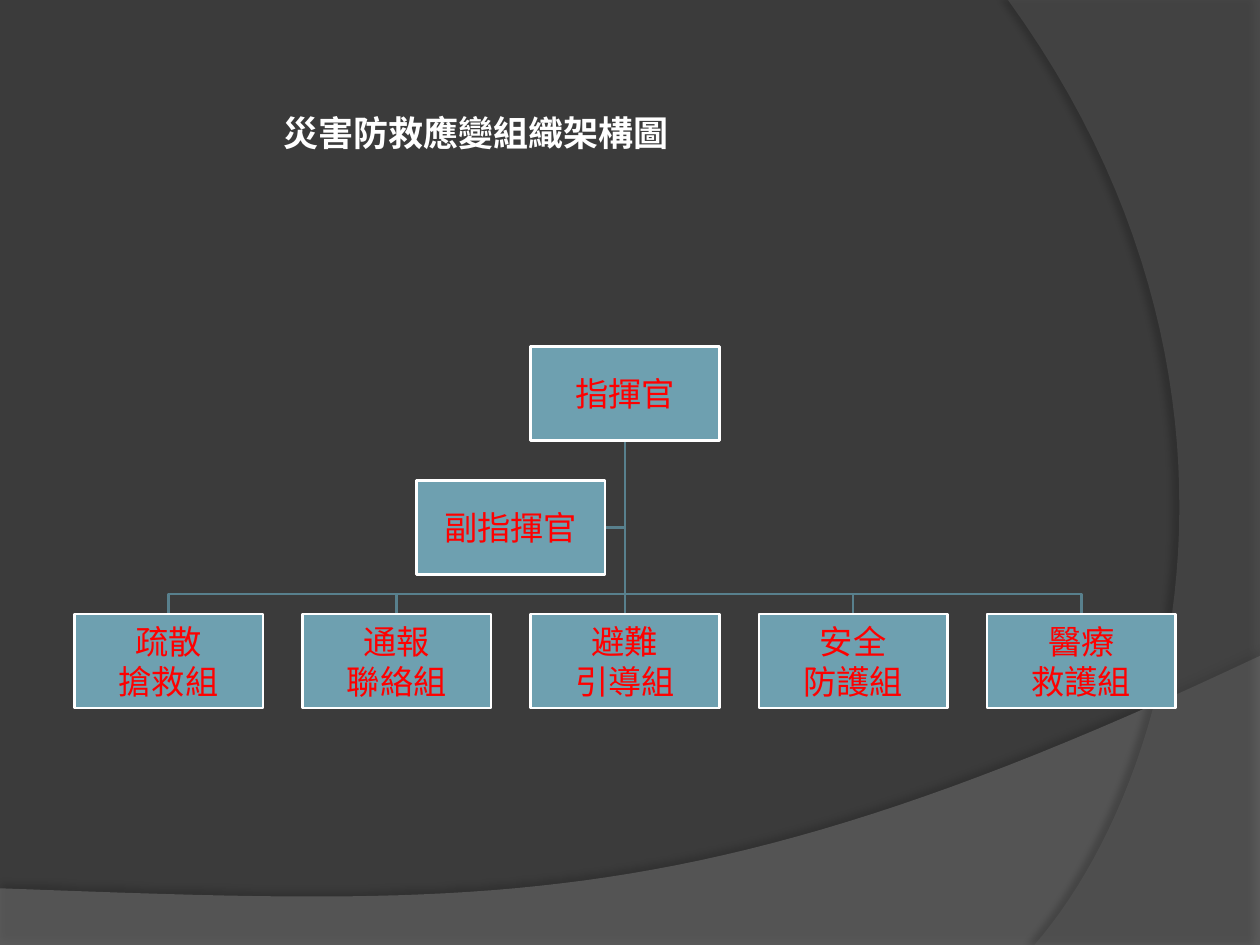
from dataclasses import dataclass
from itertools import chain

from lxml.etree import SubElement
from pptx import Presentation
from pptx.dml.color import RGBColor
from pptx.enum.shapes import MSO_CONNECTOR as Wire, MSO_SHAPE as Preset
from pptx.enum.text import MSO_ANCHOR as Anchor, PP_ALIGN as Align
from pptx.oxml.ns import qn
from pptx.util import Inches, Pt

BOTTOM, TOP = 2, 0


@dataclass(frozen=True)
class Theme:
    """Colours, type sizes and line widths of the slide."""
    font: str = "Noto Sans CJK SC"
    ground: str = "3B3B3B"
    floor: str = "7F7F7F"
    side: str = "5E5E5E"
    box: str = "6EA0B0"
    edge: str = "FFFFFF"
    wire: str = "58808D"
    label: str = "FF0000"
    title: str = "FFFFFF"
    label_size: float = 19
    title_size: float = 20
    stroke: float = 1.5


THEME = Theme()


@dataclass(frozen=True)
class Box:
    """A rectangle in inches."""
    left: float
    top: float
    width: float
    height: float

    @property
    def middle(self):
        """Horizontal centre."""
        return self.left + self.width / 2

    @property
    def bottom(self):
        """Lower edge."""
        return self.top + self.height

    def emu(self):
        """Position and size for python-pptx."""
        return [Inches(v) for v in (self.left, self.top, self.width, self.height)]


def rgb(code):
    """Turn a hex code into a colour."""
    return RGBColor.from_string(code)


def curve(start, first, second, end, steps=48):
    """Points along a cubic curve, without its start."""
    for step in range(1, steps + 1):
        t = step / steps
        weights = ((1 - t) ** 3, 3 * t * (1 - t) ** 2, 3 * t * t * (1 - t), t ** 3)
        yield tuple(sum(w * p[axis] for w, p in zip(weights, (start, first, second, end)))
                    for axis in (0, 1))


def add_outline(page, points, close):
    """Draw straight segments through points in inches."""
    spots = [(Inches(x), Inches(y)) for x, y in points]
    builder = page.shapes.build_freeform(*spots[0])
    builder.add_line_segments(spots[1:], close=close)
    return builder.convert_to_shape()


def add_swoosh(page, box, points, color, alpha, shadow):
    """Draw a translucent outline given in shares of the box, with a soft shadow."""
    shape = add_outline(page, [(box.left + x * box.width, box.top + y * box.height)
                               for x, y in points], close=True)
    shape.fill.solid()
    shape.fill.fore_color.rgb = rgb(color)
    shape.line.fill.background()
    properties = shape.element.spPr
    tint = properties.find(qn("a:solidFill"))[0]
    SubElement(tint, qn("a:alpha"), val=str(alpha * 1000))
    opacity, blur, distance, angle = shadow
    effects = SubElement(properties, qn("a:effectLst"))
    outer = SubElement(effects, qn("a:outerShdw"), blurRad=str(Pt(blur)),
                       dist=str(Pt(distance)), dir=str(angle * 60000),
                       algn="ctr", rotWithShape="0")
    shade = SubElement(outer, qn("a:srgbClr"), val="000000")
    SubElement(shade, qn("a:alpha"), val=str(opacity * 1000))


def add_backdrop(page, box):
    """Fill the ground and draw the floor and side sweeps."""
    page.background.fill.solid()
    page.background.fill.fore_color.rgb = rgb(THEME.ground)
    floor = chain([(0, 0.94), (0, 1), (1, 1), (1, 0.694)],
                  curve((1, 0.694), (0.559, 0.972), (0.391, 0.959), (0, 0.94)))
    side = chain([(1, 0), (1, 1), (0.821, 1)],
                 curve((0.821, 1), (0.935, 0.825), (1.018, 0.4), (0.8, 0)))
    add_swoosh(page, box, floor, THEME.floor, 45, (35, 4, 3.5, 270))
    add_swoosh(page, box, side, THEME.side, 40, (45, 4, 4, 180))


def write(frame, text, size, color, bold=False):
    """Put centred text in a frame and format its runs."""
    frame.text = text
    frame.word_wrap = True
    frame.vertical_anchor = Anchor.MIDDLE
    for para in frame.paragraphs:
        para.alignment = Align.CENTER
        for span in para.runs:
            span.font.size = Pt(size)
            span.font.bold = bold
            span.font.name = THEME.font
            span.font.color.rgb = rgb(color)
            SubElement(span.font._element, qn("a:ea"), typeface=THEME.font)


def add_title(page, box, text):
    """Write the slide title."""
    frame = page.shapes.add_textbox(*box.emu()).text_frame
    write(frame, text, THEME.title_size, THEME.title, bold=True)


def add_unit(page, box, text):
    """Draw one unit of the organisation."""
    shape = page.shapes.add_shape(Preset.RECTANGLE, *box.emu())
    shape.shadow.inherit = False
    shape.fill.solid()
    shape.fill.fore_color.rgb = rgb(THEME.box)
    shape.line.color.rgb = rgb(THEME.edge)
    shape.line.width = Pt(THEME.stroke)
    frame = shape.text_frame
    frame.margin_left = frame.margin_right = Inches(0.01)
    frame.margin_top = frame.margin_bottom = Inches(0.01)
    write(frame, text, THEME.label_size, THEME.label)
    return shape


def ink(line):
    """Give a line the colour and width of the wires."""
    line.color.rgb = rgb(THEME.wire)
    line.width = Pt(THEME.stroke)


def add_branch(page, *points):
    """Draw an open line with right-angled bends."""
    branch = add_outline(page, points, close=False)
    branch.shadow.inherit = False
    branch.fill.background()
    ink(branch.line)


def add_trunk(page, start, end):
    """Draw a straight connector between two points."""
    trunk = page.shapes.add_connector(Wire.STRAIGHT, *(Inches(v) for v in start + end))
    ink(trunk.line)
    SubElement(trunk._element.spPr, qn("a:effectLst"))
    return trunk


def add_organisation(page, box, chief, deputy, teams):
    """Lay out chief, deputy and an odd number of teams on three rows and join them."""
    count = len(teams)
    width = box.width / (count + 0.21 * (count - 1))
    height = box.height / (3 + 2 * 0.42)
    half_gap = 0.21 * width / 2
    rows = [box.top + 1.42 * height * row for row in range(3)]
    team_boxes = [Box(box.left + 1.21 * width * column, rows[2], width, height)
                  for column in range(count)]
    chief_box = Box(box.middle - width / 2, rows[0], width, height)
    deputy_box = Box(box.middle - half_gap - width, rows[1], width, height)
    root = (box.middle, chief_box.bottom)
    bus = rows[2] - half_gap
    level = rows[1] + height / 2
    center = count // 2

    add_branch(page, root, (box.middle, level), (box.middle - half_gap, level))
    for column in reversed(range(count)):
        tip = (team_boxes[column].middle, rows[2])
        if column == center:
            trunk = add_trunk(page, root, tip)
        else:
            add_branch(page, root, (box.middle, bus), (tip[0], bus), tip)

    trunk.begin_connect(add_unit(page, chief_box, chief), BOTTOM)
    units = [add_unit(page, place, team) for place, team in zip(team_boxes, teams)]
    trunk.end_connect(units[center], TOP)
    add_unit(page, deputy_box, deputy)


def main():
    """Build and save the slide."""
    deck = Presentation()
    deck.slide_width, deck.slide_height = Inches(10), Inches(7.5)
    page = deck.slides.add_slide(deck.slide_layouts[6])
    add_backdrop(page, Box(0, 0, 10, 7.5))
    add_organisation(page, Box(0.59, 2.75, 8.74, 2.87), "指揮官", "副指揮官",
                     ["疏散\n搶救組", "通報\n聯絡組", "避難\n引導組",
                      "安全\n防護組", "醫療\n救護組"])
    add_title(page, Box(1.3, 0.83, 4.96, 0.44), "災害防救應變組織架構圖")
    deck.save("out.pptx")


if __name__ == "__main__":
    main()
